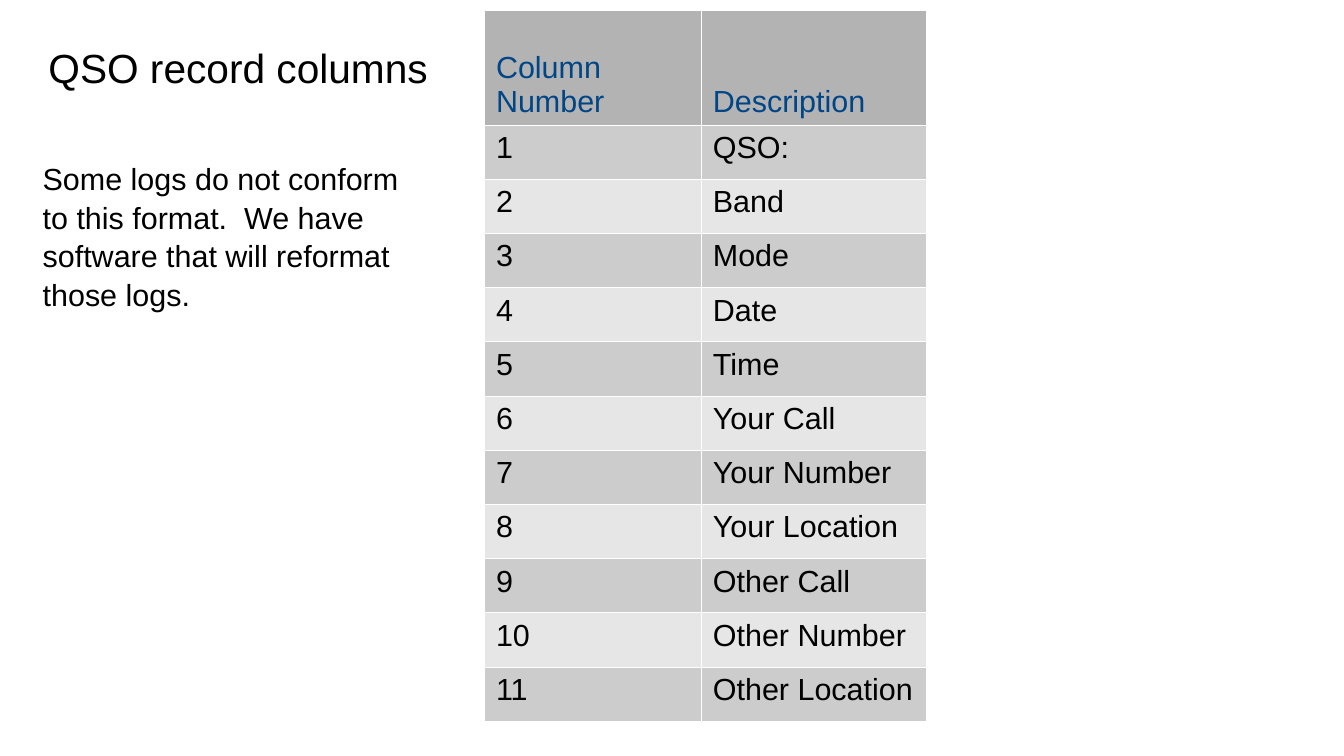
import dataclasses

import lxml.etree
import pptx
import pptx.dml.color
import pptx.enum.text
import pptx.oxml.ns
import pptx.presentation
import pptx.slide
import pptx.table
import pptx.text.text
import pptx.util

Cm = pptx.util.Cm
Pt = pptx.util.Pt


@dataclasses.dataclass(frozen=True)
class Theme:
    font: str = "Arial"
    title_size: float = 24
    body_size: float = 18
    border_width: float = 0.06
    text: str = "000000"
    header_text: str = "004586"
    header_fill: str = "B3B3B3"
    band_fills: tuple[str, str] = ("CCCCCC", "E6E6E6")
    border: str = "FFFFFF"


@dataclasses.dataclass(frozen=True)
class TextBlock:
    text: str
    left: float
    top: float
    width: float
    height: float
    size: float
    line_spacing: float = 1.0


THEME = Theme()
TEXT_BLOCKS = (
    TextBlock("QSO record columns", 0.76, 0.76, 8.84, 1.22, THEME.title_size),
    TextBlock(
        "Some logs do not conform to this format.  "
        "We have software that will reformat those logs.",
        0.64, 3.18, 8.23, 3.07, THEME.body_size, line_spacing=1.05,
    ),
)
HEADINGS = ("Column Number", "Description")
DESCRIPTIONS = (
    "QSO:", "Band", "Mode", "Date", "Time", "Your Call", "Your Number",
    "Your Location", "Other Call", "Other Number", "Other Location",
)
TABLE_LEFT, TABLE_TOP = 10.08, 0.22
COLUMN_WIDTHS = (4.52, 4.69)
HEADER_HEIGHT, ROW_HEIGHT = 2.38, 1.13


def add_run(paragraph: pptx.text.text._Paragraph, text: str, size: float, color: str) -> None:
    run = paragraph.add_run()
    run.text = text
    run.font.name = THEME.font
    run.font.size = Pt(size)
    run.font.color.rgb = pptx.dml.color.RGBColor.from_string(color)


def add_text_block(slide: pptx.slide.Slide, block: TextBlock) -> None:
    shape = slide.shapes.add_textbox(
        Cm(block.left), Cm(block.top), Cm(block.width), Cm(block.height)
    )
    shape.text_frame.word_wrap = True
    paragraph = shape.text_frame.paragraphs[0]
    paragraph.line_spacing = block.line_spacing
    add_run(paragraph, block.text, block.size, THEME.text)


def add_borders(cell: pptx.table._Cell) -> None:
    """Draw all four cell edges; must run before the cell is filled."""
    qualified = pptx.oxml.ns.qn
    properties = cell._tc.get_or_add_tcPr()
    for edge in ("a:lnL", "a:lnR", "a:lnT", "a:lnB"):
        line = lxml.etree.SubElement(
            properties, qualified(edge), w=str(Pt(THEME.border_width))
        )
        fill = lxml.etree.SubElement(line, qualified("a:solidFill"))
        lxml.etree.SubElement(fill, qualified("a:srgbClr"), val=THEME.border)


def fill_cell(cell: pptx.table._Cell, text: str, color: str, fill: str) -> None:
    add_borders(cell)
    cell.fill.solid()
    cell.fill.fore_color.rgb = pptx.dml.color.RGBColor.from_string(fill)
    add_run(cell.text_frame.paragraphs[0], text, THEME.body_size, color)


def add_column_table(slide: pptx.slide.Slide) -> None:
    records = [(str(number), name) for number, name in enumerate(DESCRIPTIONS, start=1)]
    table = slide.shapes.add_table(
        len(records) + 1, len(HEADINGS), Cm(TABLE_LEFT), Cm(TABLE_TOP),
        Cm(sum(COLUMN_WIDTHS)), Cm(HEADER_HEIGHT + ROW_HEIGHT * len(records)),
    ).table
    table.first_row = False
    table.horz_banding = False
    for column, width in zip(table.columns, COLUMN_WIDTHS):
        column.width = Cm(width)
    for row in table.rows:
        row.height = Cm(ROW_HEIGHT)
    table.rows[0].height = Cm(HEADER_HEIGHT)

    for cell, heading in zip(table.rows[0].cells, HEADINGS):
        fill_cell(cell, heading, THEME.header_text, THEME.header_fill)
        cell.vertical_anchor = pptx.enum.text.MSO_ANCHOR.BOTTOM
    for index, record in enumerate(records):
        for cell, text in zip(table.rows[index + 1].cells, record):
            fill_cell(cell, text, THEME.text, THEME.band_fills[index % 2])


def build_presentation() -> pptx.presentation.Presentation:
    presentation = pptx.Presentation()
    presentation.slide_width = Cm(28)
    presentation.slide_height = Cm(15.75)
    slide = presentation.slides.add_slide(presentation.slide_layouts[6])
    add_column_table(slide)
    for block in TEXT_BLOCKS:
        add_text_block(slide, block)
    return presentation


if __name__ == "__main__":
    build_presentation().save("out.pptx")
